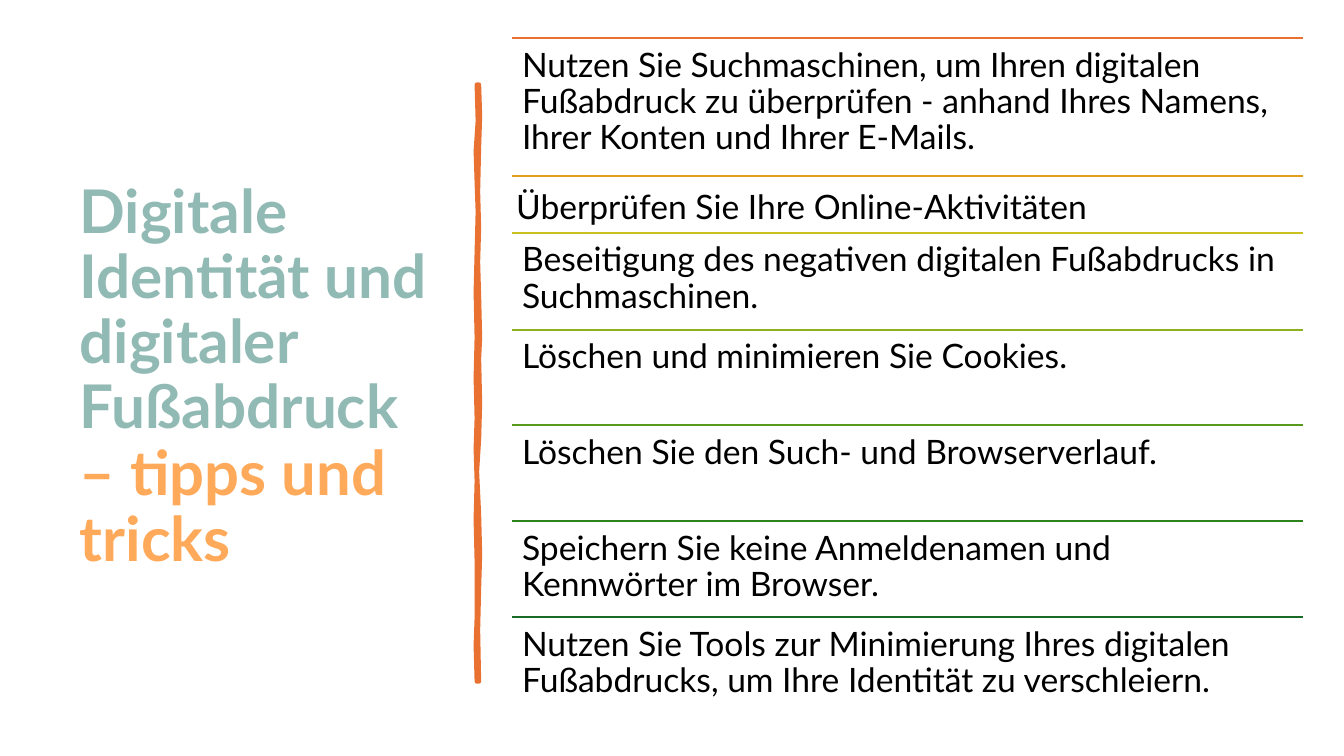
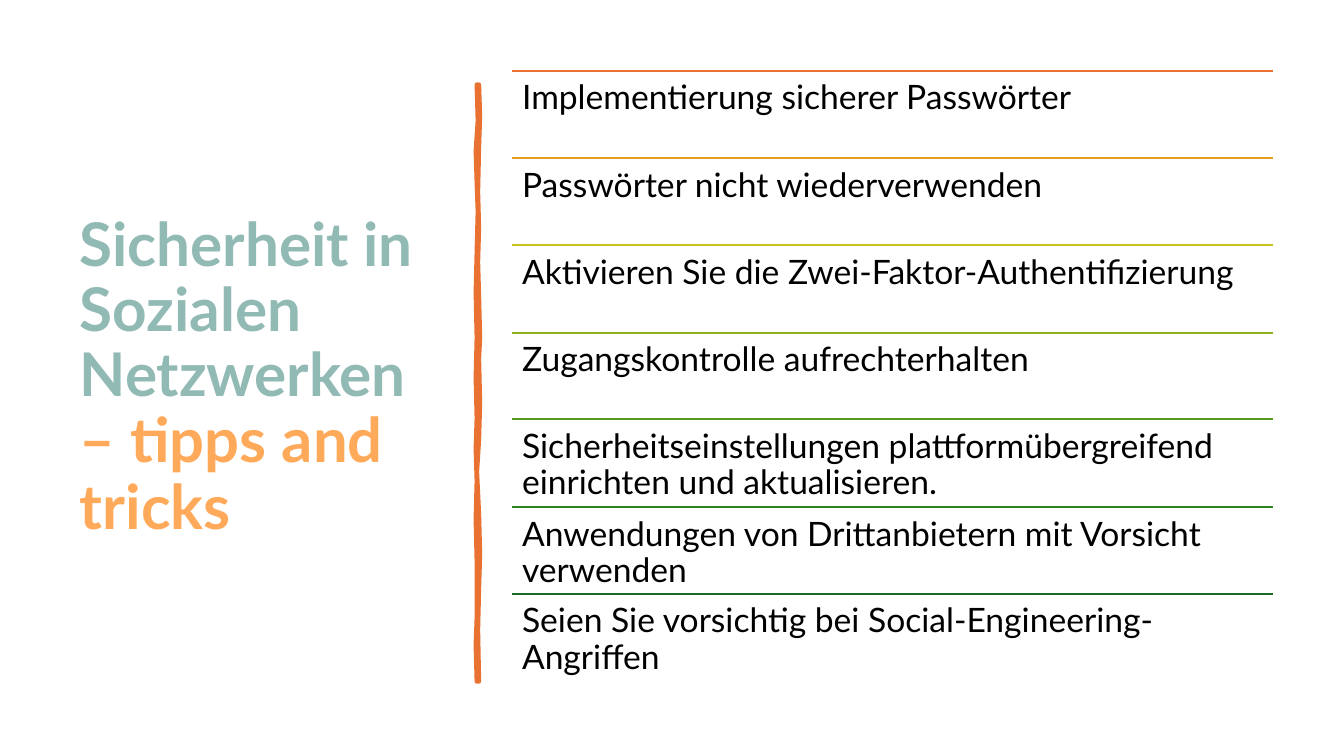
"""Build two tip slides with a title, a hand-drawn divider and ruled rows."""
from dataclasses import dataclass
from itertools import accumulate

from lxml.etree import SubElement
from pptx import Presentation
from pptx.dml.color import RGBColor
from pptx.enum.shapes import MSO_CONNECTOR as Connector
from pptx.enum.text import MSO_ANCHOR as Anchor, MSO_AUTO_SIZE as AutoSize, PP_ALIGN as Align
from pptx.oxml.ns import qn
from pptx.util import Pt

EMU_PER_PX = 9144
FONT = "Lato"
TITLE_ONLY = 5
ROW_LEFT = 508
COLORS = {"topic": "92BAB5", "tips": "FFAA5A", "divider": "E97132", "text": "000000"}
RULE_COLORS = ("E97132", "E39D1F", "CBC11E", "8EB21E", "56991D", "2C821B", "196B24")
DIVIDER_POINTS = (
    (475, 84), (476, 115), (475, 146), (474, 190), (475, 226), (474, 260), (475, 294),
    (476, 335), (475, 356), (476, 400), (475, 436), (473, 468), (475, 510), (476, 550),
    (475, 584), (474, 625), (475, 676), (473, 676), (472, 640), (473, 613), (473, 557),
    (472, 515), (473, 477), (472, 445), (473, 415), (472, 375), (473, 335), (472, 290),
    (473, 250), (474, 210), (473, 181), (472, 150), (474, 120), (473, 84),
)


@dataclass(frozen=True)
class Row:
    """A tip with its row height and text insets."""
    text: str
    height: int
    inset_x: int = 10
    inset_top: int = 10


@dataclass(frozen=True)
class TipPage:
    """The title lines and the rows of one slide."""
    topic: str
    tips: str
    top: int
    width: int
    rows: tuple[Row, ...]


PAGES = (
    TipPage("Digitale Identität und digitaler Fußabdruck", "– tipps und tricks", 38, 784, (
        Row("Nutzen Sie Suchmaschinen, um Ihren digitalen Fußabdruck zu überprüfen - "
            "anhand Ihres Namens, Ihrer Konten und Ihrer E-Mails.", 137),
        Row("Überprüfen Sie Ihre Online-Aktivitäten", 56, 4, 14),
        Row("Beseitigung des negativen digitalen Fußabdrucks in Suchmaschinen.", 96),
        Row("Löschen und minimieren Sie Cookies.", 95),
        Row("Löschen Sie den Such- und Browserverlauf.", 95),
        Row("Speichern Sie keine Anmeldenamen und Kennwörter im Browser.", 95),
        Row("Nutzen Sie Tools zur Minimierung Ihres digitalen Fußabdrucks, "
            "um Ihre Identität zu verschleiern.", 95),
    )),
    TipPage("Sicherheit in Sozialen Netzwerken", "– tipps and tricks", 70, 755, (
        Row("Implementierung sicherer Passwörter", 87),
        Row("Passwörter nicht wiederverwenden", 86),
        Row("Aktivieren Sie die Zwei-Faktor-Authentifizierung", 87),
        Row("Zugangskontrolle aufrechterhalten", 86),
        Row("Sicherheitseinstellungen plattformübergreifend einrichten und aktualisieren.", 87),
        Row("Anwendungen von Drittanbietern mit Vorsicht verwenden", 86),
        Row("Seien Sie vorsichtig bei Social-Engineering-Angriffen", 86),
    )),
)


def px(length: int) -> int:
    """Turn pixels into EMU."""
    return length * EMU_PER_PX


def rgb(value: str) -> RGBColor:
    """Turn a hex string into a colour."""
    return RGBColor.from_string(value)


def add_span(para, text: str, *, size: int, color: str, bold: bool = False) -> None:
    """Add formatted text to a paragraph."""
    span = para.add_run()
    span.text = text
    span.font.name = FONT
    span.font.size = Pt(size)
    span.font.bold = bold
    span.font.color.rgb = rgb(COLORS[color])


def add_title(page, content: TipPage) -> None:
    """Fill and place the title placeholder."""
    title = page.shapes.title
    title.left, title.top, title.width, title.height = map(px, (69, 70, 374, 611))
    frame = title.text_frame
    frame.auto_size = AutoSize.NONE
    frame.word_wrap = True
    frame.vertical_anchor = Anchor.MIDDLE
    para = frame.paragraphs[0]
    para.alignment = Align.LEFT
    para.line_spacing = 0.9
    add_span(para, content.topic, size=43, color="topic", bold=True)
    para.add_line_break()
    add_span(para, content.tips, size=44, color="tips", bold=True)


def add_divider(page) -> None:
    """Draw the wavy vertical stroke."""
    start, *others = DIVIDER_POINTS
    builder = page.shapes.build_freeform(*start, scale=EMU_PER_PX)
    builder.add_line_segments(others, close=True)
    divider = builder.convert_to_shape()
    divider.shadow.inherit = False
    divider.fill.solid()
    divider.fill.fore_color.rgb = rgb(COLORS["divider"])
    divider.line.color.rgb = rgb(COLORS["divider"])
    divider.line.width = Pt(3.25)


def add_row(group, row: Row, top: int, width: int, color: str) -> None:
    """Draw one rule with its tip below."""
    rule = group.shapes.add_connector(
        Connector.STRAIGHT, px(ROW_LEFT), px(top), px(ROW_LEFT + width), px(top))
    rule.line.color.rgb = rgb(color)
    rule.line.width = Pt(1.5)
    SubElement(rule.element.spPr, qn("a:effectLst"))
    box = group.shapes.add_textbox(px(ROW_LEFT), px(top), px(width), px(row.height))
    frame = box.text_frame
    frame.word_wrap = True
    frame.margin_left = frame.margin_right = px(row.inset_x)
    frame.margin_top = px(row.inset_top)
    frame.margin_bottom = px(row.inset_x)
    para = frame.paragraphs[0]
    para.line_spacing = 0.9
    add_span(para, row.text, size=24, color="text")


def add_page(deck, content: TipPage) -> None:
    """Add one complete slide."""
    page = deck.slides.add_slide(deck.slide_layouts[TITLE_ONLY])
    add_title(page, content)
    add_divider(page)
    group = page.shapes.add_group_shape()
    tops = accumulate((row.height for row in content.rows), initial=content.top)
    for row, top, color in zip(content.rows, tops, RULE_COLORS):
        add_row(group, row, top, content.width, color)


def main() -> None:
    """Build and save the deck."""
    deck = Presentation()
    deck.slide_width, deck.slide_height = px(1333), px(750)
    for content in PAGES:
        add_page(deck, content)
    deck.save("out.pptx")


if __name__ == "__main__":
    main()
